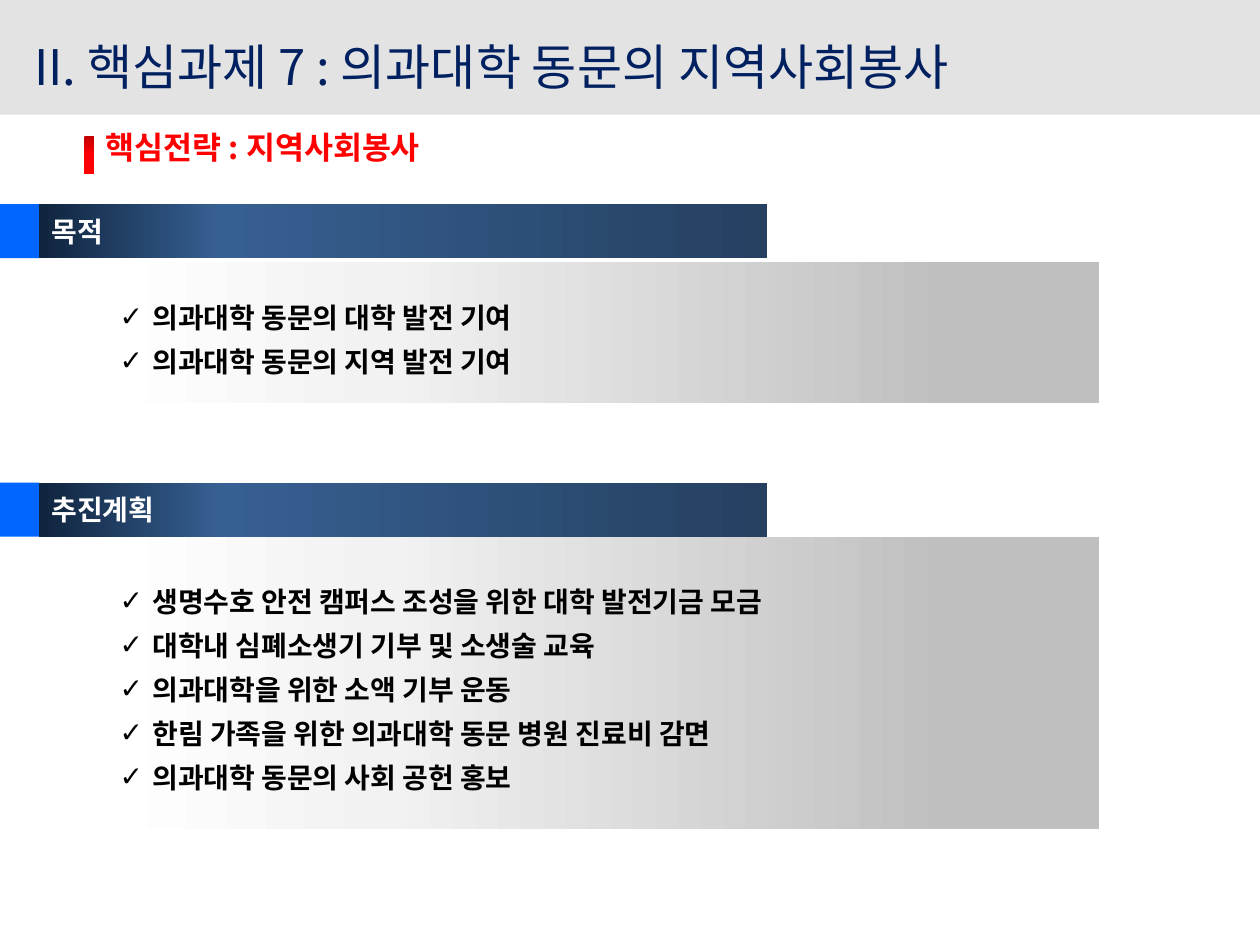
from copy import deepcopy
from pptx import Presentation
from pptx.dml.color import RGBColor
from pptx.enum.shapes import MSO_SHAPE as Kind
from pptx.enum.text import MSO_ANCHOR as Anchor, MSO_AUTO_SIZE as Fit, PP_ALIGN as Align
from pptx.oxml.ns import qn
from pptx.util import Inches, Pt
from lxml import etree

FONT = "Noto Sans CJK KR"
BLUE = [(0, "0F243E"), (25, "376092"), (100, "254061")]
GRAY = [(0, "FFFFFF"), (28, "F2F2F2"), (85, "BFBFBF")]
RED = [(0, "C00000"), (50, "FF0000"), (100, "FF0000")]


def paint(shape, stops, angle=0):
    """Fill with one colour, or with a gradient of (percent, colour) stops."""
    fill = shape.fill
    if isinstance(stops, str):
        fill.solid()
        fill.fore_color.rgb = RGBColor.from_string(stops)
    else:
        fill.gradient()
        fill.gradient_angle = angle
        group = shape.element.spPr.find(".//" + qn("a:gsLst"))
        group.append(deepcopy(group[-1]))
        for stop, (pos, color) in zip(fill.gradient_stops, stops):
            stop.position = pos / 100
            stop.color.rgb = RGBColor.from_string(color)
    shape.line.fill.background()


def style(par, size, color, bold=True):
    par.alignment = Align.LEFT
    font = par.font
    font.size, font.bold, font.name = Pt(size), bold, FONT
    font.color.rgb = RGBColor.from_string(color)
    for run in par.runs:
        run.font.name = FONT
        east = etree.SubElement(run.font._element, qn("a:ea"))
        east.set("typeface", FONT)


prs = Presentation()
prs.slide_width, prs.slide_height = Inches(10), Inches(7.5)
slide = prs.slides.add_slide(prs.slide_layouts[3])
shapes = slide.shapes
title, goal, plan = slide.placeholders

# Bullet panels, each under a heading bar
panels = [
    (goal, 1.62, 2.08, 1.12, "목적", [
        "의과대학 동문의 대학 발전 기여",
        "의과대학 동문의 지역 발전 기여",
    ]),
    (plan, 3.83, 4.26, 2.32, "추진계획", [
        "생명수호 안전 캠퍼스 조성을 위한 대학 발전기금 모금",
        "대학내 심폐소생기 기부 및 소생술 교육",
        "의과대학을 위한 소액 기부 운동",
        "한림 가족을 위한 의과대학 동문 병원 진료비 감면",
        "의과대학 동문의 사회 공헌 홍보",
    ]),
]
for body, bar_top, top, high, head, items in panels:
    body.left, body.top = Inches(0.85), Inches(top)
    body.width, body.height = Inches(7.87), Inches(high)
    paint(body, GRAY)
    frame = body.text_frame
    frame.auto_size = Fit.NONE
    frame.vertical_anchor = Anchor.MIDDLE
    frame.margin_top, frame.margin_bottom = Inches(0.1), 0
    frame.text = "\n".join(items)
    for par in frame.paragraphs:
        par.line_spacing, par.space_before, par.space_after = 1.0, Pt(0), Pt(6)
        props = par._p.get_or_add_pPr()
        props.set("marL", str(Inches(0.26)))
        props.set("indent", str(-Inches(0.26)))
        etree.SubElement(props, qn("a:buChar")).set("char", "✓")
        style(par, 16, "000000")

    bar = shapes.add_shape(Kind.RECTANGLE, Inches(0.31), Inches(bar_top), Inches(5.78), Inches(0.43))
    tab = shapes.add_shape(Kind.RECTANGLE, 0, Inches(bar_top), Inches(0.31), Inches(0.43))
    bar.shadow.inherit = tab.shadow.inherit = False
    paint(bar, BLUE)
    paint(tab, "0066FF")
    bar.text_frame.text = head
    bar.text_frame.vertical_anchor = Anchor.MIDDLE
    style(bar.text_frame.paragraphs[0], 16, "FFFFFF")

# Strategy line with its red marker
box = shapes.add_textbox(Inches(0.74), Inches(0.97), Inches(8.9), Inches(0.4))
box.text_frame.word_wrap = True
box.text_frame.text = "핵심전략 : 지역사회봉사"
style(box.text_frame.paragraphs[0], 18, "FF0000")
mark = shapes.add_shape(Kind.RECTANGLE, Inches(0.67), Inches(1.08), Inches(0.08), Inches(0.3))
mark.shadow.inherit = False
paint(mark, RED, 270)

# Title on its gray band
band = shapes.add_shape(Kind.RECTANGLE, 0, 0, prs.slide_width, Inches(0.91))
band.shadow.inherit = False
paint(band, "E3E3E3")
title.left, title.top = Inches(0.17), Inches(0.23)
title.width, title.height = Inches(9.83), Inches(0.59)
title.text_frame.text = "II. 핵심과제 7 : 의과대학 동문의 지역사회봉사"
title.text_frame.auto_size = Fit.NONE
title.text_frame.vertical_anchor = Anchor.MIDDLE
style(title.text_frame.paragraphs[0], 28, "002060", False)
band.element.addnext(title.element)

prs.save("out.pptx")
